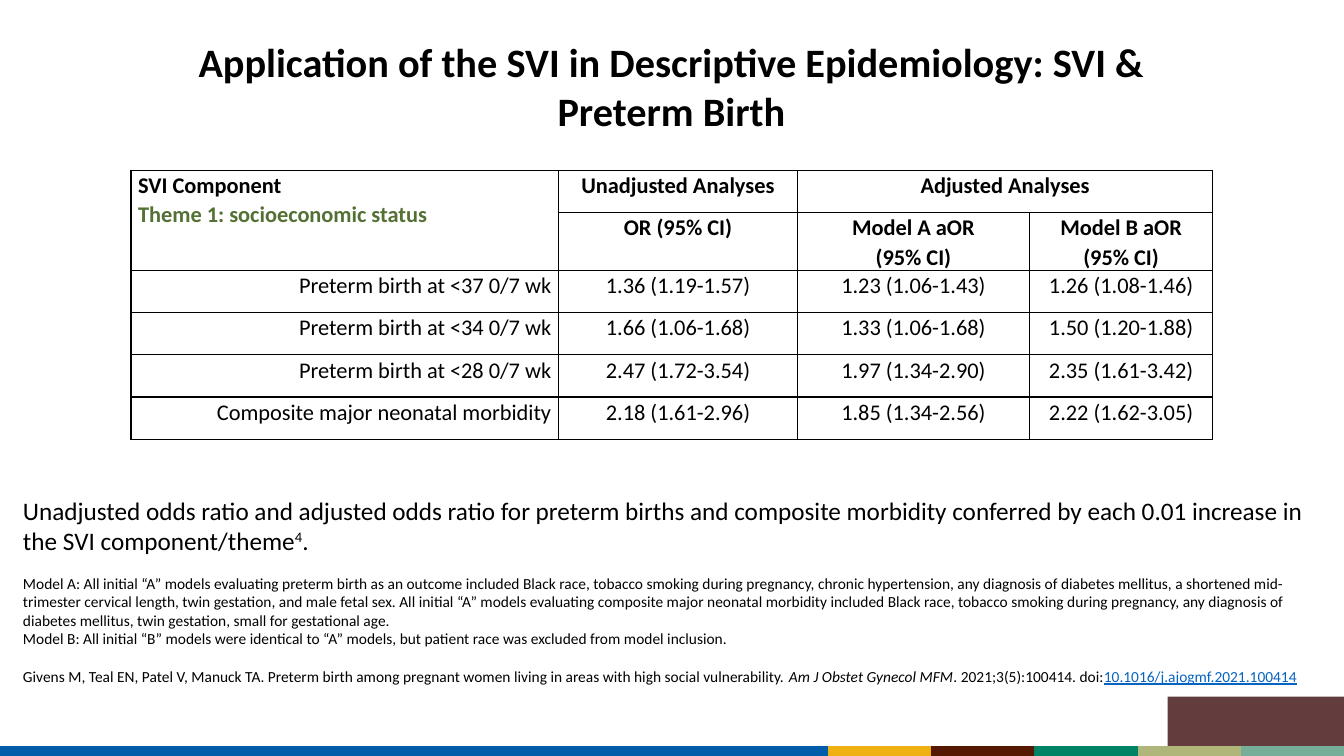
from lxml import etree
from pptx import Presentation
from pptx import util as u
from pptx.dml.color import RGBColor
from pptx.enum import shapes, text
from pptx.oxml import ns

Inches, Pt = u.Inches, u.Pt
LEFT, CENTER, RIGHT = text.PP_ALIGN.LEFT, text.PP_ALIGN.CENTER, text.PP_ALIGN.RIGHT

COLORS = {
    "black": "000000", "theme": "547135", "link": "0563C1", "plate": "633D3D",
    "blue": "005DAA", "gold": "EEB111", "brown": "541900",
    "green": "008265", "olive": "B0B579", "sage": "76AE99",
}
TITLE = "Application of the SVI in Descriptive Epidemiology: SVI & Preterm Birth"
COLUMN_WIDTHS = [4.24, 2.37, 2.3, 1.82]
ROW_HEIGHTS = [0.42, 0.52, 0.42, 0.42, 0.42, 0.42]
# Each header cell: (row, column, last row, last column, lines)
HEADERS = [
    (0, 0, 1, 0, ["SVI Component", "Theme 1: socioeconomic status"]),
    (0, 1, 0, 1, ["Unadjusted Analyses"]),
    (0, 2, 0, 3, ["Adjusted Analyses"]),
    (1, 1, 1, 1, ["OR (95% CI)"]),
    (1, 2, 1, 2, ["Model A aOR", "(95% CI)"]),
    (1, 3, 1, 3, ["Model B aOR (95% CI)"]),
]
OUTCOMES = [
    ["Preterm birth at <37 0/7 wk", "1.36 (1.19-1.57)", "1.23 (1.06-1.43)", "1.26 (1.08-1.46)"],
    ["Preterm birth at <34 0/7 wk", "1.66 (1.06-1.68)", "1.33 (1.06-1.68)", "1.50 (1.20-1.88)"],
    ["Preterm birth at <28 0/7 wk", "2.47 (1.72-3.54)", "1.97 (1.34-2.90)", "2.35 (1.61-3.42)"],
    ["Composite major neonatal morbidity", "2.18 (1.61-2.96)", "1.85 (1.34-2.56)", "2.22 (1.62-3.05)"],
]
# Each note: (size, space before, [(words, run format)])
NOTES = [
    (18, 0, [
        ("Unadjusted odds ratio and adjusted odds ratio for preterm births and composite "
         "morbidity conferred by each 0.01 increase in the SVI component/theme", {}),
        ("4", {"baseline": 30000}), (".", {})]),
    (11, 13.4, [
        ("Model A: All initial “A” models evaluating preterm birth as an outcome included "
         "Black race, tobacco smoking during pregnancy, chronic hypertension, any diagnosis "
         "of diabetes mellitus, a shortened mid-trimester cervical length, twin gestation, "
         "and male fetal sex. All initial “A” models evaluating composite major neonatal "
         "morbidity included Black race, tobacco smoking during pregnancy, any diagnosis of "
         "diabetes mellitus, twin gestation, small for gestational age.", {})]),
    (11, 0, [
        ("Model B: All initial “B” models were identical to “A” models, but patient race "
         "was excluded from model inclusion.", {})]),
    (11, 13.4, [
        ("Givens M, Teal EN, Patel V, Manuck TA. Preterm birth among pregnant women living "
         "in areas with high social vulnerability. ", {}),
        ("Am J Obstet Gynecol MFM", {"italic": True}),
        (". 2021;3(5):100414. doi:", {}),
        ("10.1016/j.ajogmf.2021.100414", {"color": "link", "underline": True})]),
]


def rgb(name):
    return RGBColor.from_string(COLORS[name])


def add_run(paragraph, words, size, color="black", baseline=None, **formats):
    run = paragraph.add_run()
    run.text = words
    for name, value in {"name": "Calibri", "size": Pt(size), **formats}.items():
        setattr(run.font, name, value)
    run.font.color.rgb = rgb(color)
    if baseline:
        run.font._element.set("baseline", str(baseline))


def next_paragraph(frame, index):
    return frame.paragraphs[0] if index == 0 else frame.add_paragraph()


def add_footer(slide, left, top, width):
    """Coloured strip: one long band, then five equal ones, under a plate."""
    long_band = 8.21
    short_band = (width - long_band) / 5
    start = left
    for index, color in enumerate(["blue", "gold", "brown", "green", "olive", "sage"]):
        end = start + (short_band if index else long_band)
        band = slide.shapes.add_connector(
            shapes.MSO_CONNECTOR.STRAIGHT,
            Inches(start), Inches(top), Inches(end), Inches(top))
        band.line.color.rgb = rgb(color)
        band.line.width = Pt(7.5)
        etree.SubElement(band._element.spPr, ns.qn("a:effectLst"))
        start = end
    plate = slide.shapes.add_shape(
        shapes.MSO_SHAPE.RECTANGLE, Inches(left + width - 1.75), Inches(top - 0.54),
        Inches(1.75), Inches(0.49))
    plate.shadow.inherit = False
    plate.fill.solid()
    plate.fill.fore_color.rgb = rgb("plate")
    plate.line.fill.background()


def add_title(slide, left, top, width, height):
    frame = slide.shapes.add_textbox(*map(Inches, (left, top, width, height))).text_frame
    frame.word_wrap = True
    frame.vertical_anchor = text.MSO_ANCHOR.MIDDLE
    frame.paragraphs[0].alignment = CENTER
    add_run(frame.paragraphs[0], TITLE, 28.8, bold=True)


def style_cell(cell):
    insets = {"margin_left": 0.07, "margin_right": 0.07, "margin_top": 0, "margin_bottom": 0}
    for name, value in insets.items():
        setattr(cell, name, Inches(value))
    properties = cell._tc.get_or_add_tcPr()
    for side in ("lnL", "lnR", "lnT", "lnB"):
        border = etree.SubElement(properties, ns.qn(f"a:{side}"), w=str(Pt(1)))
        fill = etree.SubElement(border, ns.qn("a:solidFill"))
        etree.SubElement(fill, ns.qn("a:srgbClr"), val=COLORS["black"])
    cell.fill.background()


def fill_cell(cell, lines, alignment, bold):
    for index, words in enumerate(lines):
        paragraph = next_paragraph(cell.text_frame, index)
        paragraph.alignment = alignment
        paragraph.line_spacing = 1.07
        color = "theme" if words.startswith("Theme") else "black"
        add_run(paragraph, words, 16, color, bold=bold)


def add_odds_table(slide, left, top, width, height):
    table = slide.shapes.add_table(
        len(ROW_HEIGHTS), len(COLUMN_WIDTHS),
        *map(Inches, (left, top, width, height))).table
    for flag in ("first_row", "horz_banding"):
        setattr(table, flag, False)
    for column, size in zip(table.columns, COLUMN_WIDTHS):
        column.width = Inches(size)
    for row, size in zip(table.rows, ROW_HEIGHTS):
        row.height = Inches(size)
    for cell in table.iter_cells():
        style_cell(cell)
    # Header rows
    for row, column, last_row, last_column, lines in HEADERS:
        cell = table.cell(row, column)
        if (row, column) != (last_row, last_column):
            cell.merge(table.cell(last_row, last_column))
        fill_cell(cell, lines, CENTER if column else LEFT, True)
    # Outcome rows
    for row, values in enumerate(OUTCOMES, start=2):
        for column, words in enumerate(values):
            fill_cell(table.cell(row, column), [words], CENTER if column else RIGHT, False)


def add_notes(slide, left, top, width, height):
    frame = slide.shapes.add_textbox(*map(Inches, (left, top, width, height))).text_frame
    frame.word_wrap = True
    for index, (size, gap, runs) in enumerate(NOTES):
        paragraph = next_paragraph(frame, index)
        if gap:
            paragraph.space_before = Pt(gap)
        for words, formats in runs:
            add_run(paragraph, words, size, **formats)


def main():
    deck = Presentation()
    deck.slide_width, deck.slide_height = Inches(13.33), Inches(7.5)
    slide = deck.slides.add_slide(deck.slide_layouts[6])
    add_footer(slide, 0, 7.45, 13.33)
    add_title(slide, 1.72, 0.31, 9.88, 1.08)
    add_odds_table(slide, 1.3, 1.69, sum(COLUMN_WIDTHS), sum(ROW_HEIGHTS))
    add_notes(slide, 0.13, 4.86, 13.2, 2.49)
    deck.save("out.pptx")


if __name__ == "__main__":
    main()
